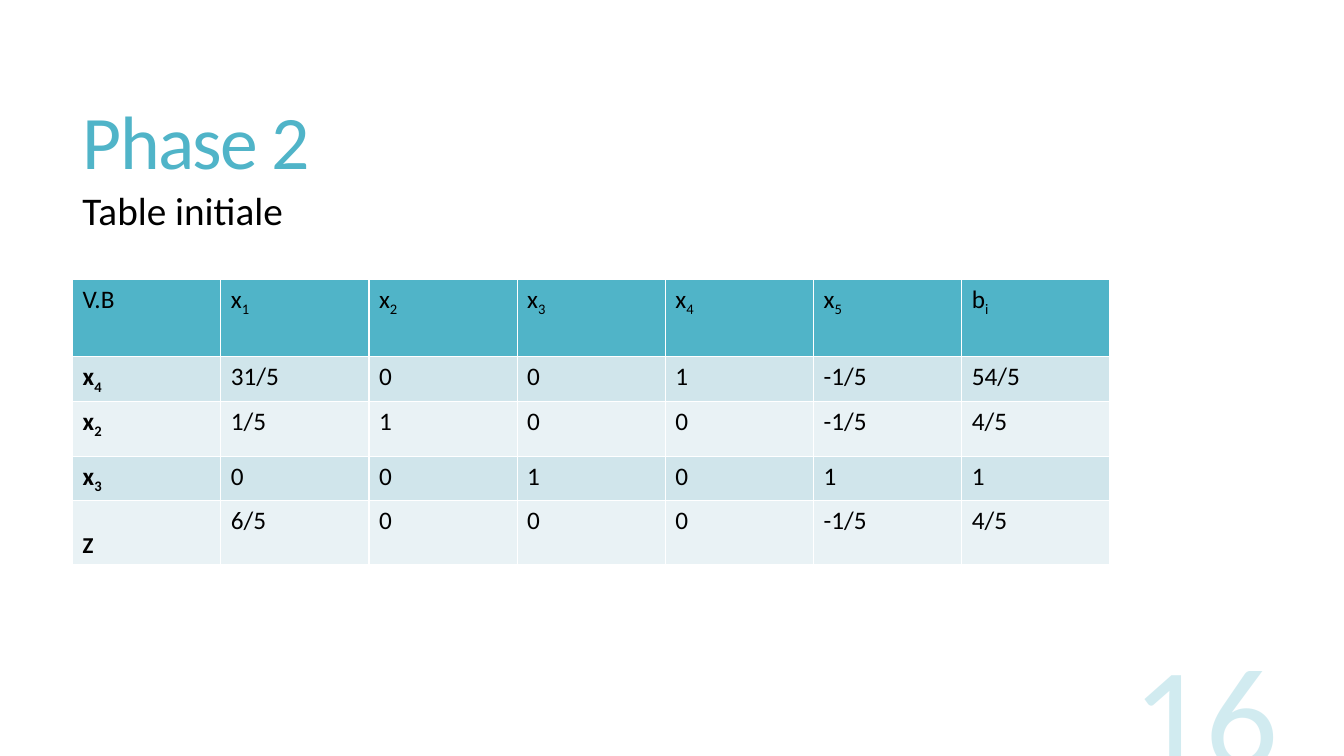
from lxml.etree import SubElement
from pptx import Presentation
from pptx.dml.color import RGBColor
from pptx.enum.text import MSO_ANCHOR, PP_ALIGN
from pptx.oxml.ns import qn
from pptx.util import Inches, Pt

COLORS = {"accent": "50B4C8", "text": "000000", "odd": "D0E5EB", "even": "E9F2F5"}
FONT = "Calibri"
HEADER = ["V.B", "x_1", "x_2", "x_3", "x_4", "x_5", "b_i"]
ROWS = [
    ["x_4", "31/5", "0", "0", "1", "-1/5", "54/5"],
    ["x_2", "1/5", "1", "0", "0", "-1/5", "4/5"],
    ["x_3", "0", "0", "1", "0", "1", "1"],
    ["_Z", "6/5", "0", "0", "0", "-1/5", "4/5"],
]
ROW_HEIGHTS = [0.77, 0.44, 0.55, 0.44, 0.62]


def set_font(p, size, color="text", bold=False):
    """Format a whole paragraph."""
    p.font.name = FONT
    p.font.size = Pt(size)
    p.font.bold = bold
    p.font.color.rgb = RGBColor.from_string(COLORS[color])


def add_title(slide, left, top, width, height):
    """Place the slide title in its box."""
    sp = slide.shapes.title
    sp.left, sp.top = Inches(left), Inches(top)
    sp.width, sp.height = Inches(width), Inches(height)
    tf = sp.text_frame
    tf.vertical_anchor = MSO_ANCHOR.MIDDLE
    p = tf.paragraphs[0]
    p.alignment = PP_ALIGN.LEFT
    p.line_spacing = 0.85
    set_font(p, 54, "accent")
    r = p.add_run()
    r.text = "Phase 2"
    r._r.get_or_add_rPr().set("spc", "-120")


def add_text(slide, text, left, top, width, height, size, color, anchor, align):
    """Add a one-line text box and return its paragraph."""
    sp = slide.shapes.add_textbox(Inches(left), Inches(top), Inches(width), Inches(height))
    tf = sp.text_frame
    tf.word_wrap = True
    tf.vertical_anchor = anchor
    p = tf.paragraphs[0]
    p.text = text
    p.alignment = align
    set_font(p, size, color)
    return p


def add_page_number(slide, left, top, width, height):
    """Add the large pale page number."""
    p = add_text(slide, "16", left, top, width, height, 103, "accent",
                 MSO_ANCHOR.BOTTOM, PP_ALIGN.RIGHT)
    for clr in p._p.iter(qn("a:srgbClr")):
        SubElement(clr, qn("a:alpha")).set("val", "25000")


def fill_cell(cell, text, fill, bold):
    """Write a cell, with the part after an underscore as subscript."""
    cell.fill.solid()
    cell.fill.fore_color.rgb = RGBColor.from_string(COLORS[fill])
    base, _, sub = text.partition("_")
    p = cell.text_frame.paragraphs[0]
    set_font(p, 18 if base else 28, bold=bold)
    for part, offset in ((base, "0"), (sub, "-25000")):
        if part:
            r = p.add_run()
            r.text = part
            r.font.bold = bold
            r._r.get_or_add_rPr().set("baseline", offset)


def add_simplex_table(slide, left, top, width):
    """Add the initial simplex table."""
    rows = [HEADER] + ROWS
    frame = slide.shapes.add_table(len(rows), len(HEADER), Inches(left), Inches(top),
                                   Inches(width), Inches(sum(ROW_HEIGHTS)))
    table = frame.table
    for i, (values, height) in enumerate(zip(rows, ROW_HEIGHTS)):
        table.rows[i].height = Inches(height)
        fill = "accent" if i == 0 else "odd" if i % 2 else "even"
        for j, value in enumerate(values):
            fill_cell(table.cell(i, j), value, fill, i > 0 and j == 0)


def main():
    """Build and save the slide."""
    prs = Presentation()
    prs.slide_width, prs.slide_height = Inches(13.33), Inches(7.5)
    slide = prs.slides.add_slide(prs.slide_layouts[5])
    add_title(slide, 0.72, 0.55, 11.78, 1.81)
    add_simplex_table(slide, 0.72, 2.77, 10.29)
    add_page_number(slide, 9.58, 6.43, 3.2, 1.53)
    add_text(slide, "Table initiale", 0.72, 1.85, 5.26, 0.47, 28, "text",
             MSO_ANCHOR.MIDDLE, PP_ALIGN.LEFT)
    prs.save("out.pptx")


if __name__ == "__main__":
    main()
